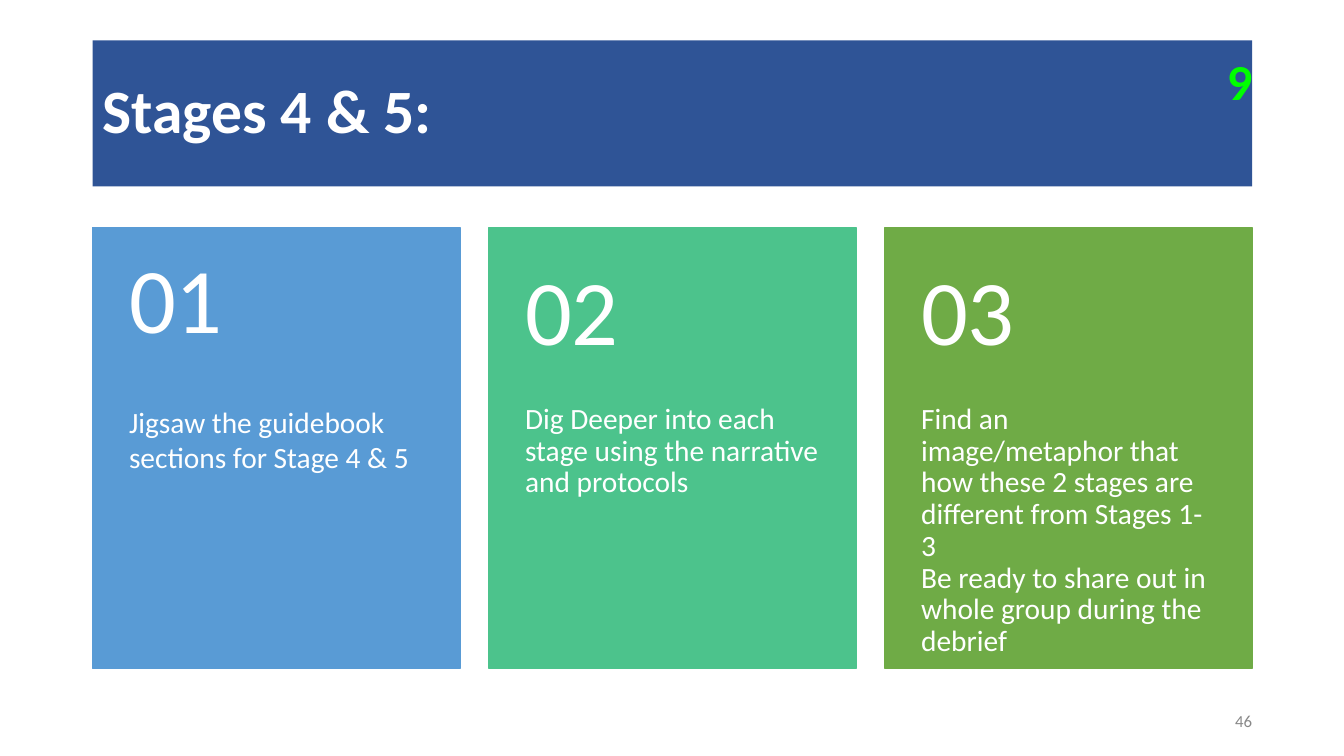
from pptx import Presentation
from pptx import util as u
from pptx.dml.color import RGBColor
from pptx.enum import shapes, text

WHITE = RGBColor(0xFF, 0xFF, 0xFF)
NAVY = RGBColor(0x2F, 0x54, 0x96)
BLUE = RGBColor(0x59, 0x9B, 0xD5)
TEAL = RGBColor(0x4C, 0xC3, 0x8C)
GREEN = RGBColor(0x6F, 0xAB, 0x46)
LIME = RGBColor(0x00, 0xFF, 0x00)
GRAY = RGBColor(0x88, 0x88, 0x88)

WIDTH, HEIGHT = 13.33, 7.5
MARGIN, CONTENT_WIDTH = 0.92, 11.5
CARD_GAP = 0.285

# Number, paragraphs, colour, line spacing of the body, height of the number box
CARDS = [
    ("01", ["Jigsaw the guidebook sections for Stage 4 & 5"], BLUE, 1.0, 1.5),
    ("02", ["Dig Deeper into each stage using the narrative and protocols"],
     TEAL, 0.9, 1.75),
    ("03", ["Find an image/metaphor that how these 2 stages are different from Stages 1-3",
            "Be ready to share out in whole group during the debrief"],
     GREEN, 0.9, 1.75),
]


def write(shape, lines, insets, size, color, bold=False, spacing=1.0,
          anchor=text.MSO_ANCHOR.TOP, align=text.PP_ALIGN.LEFT):
    """Fill a shape with formatted paragraphs."""
    frame = shape.text_frame
    frame_format = {"word_wrap": True, "vertical_anchor": anchor}
    for side, inset in zip(("left", "top", "right", "bottom"), insets):
        frame_format[f"margin_{side}"] = u.Inches(inset)
    for name, value in frame_format.items():
        setattr(frame, name, value)
    frame.text = "\n".join(lines)
    font_format = {"name": "Calibri", "size": u.Pt(size), "bold": bold}
    for paragraph in frame.paragraphs:
        paragraph.alignment = align
        paragraph.line_spacing = spacing
        for name, value in font_format.items():
            setattr(paragraph.font, name, value)
        paragraph.font.color.rgb = color


def add_text(slide, box, lines, insets, size, color, **options):
    shape = slide.shapes.add_textbox(*map(u.Inches, box))
    write(shape, lines, insets, size, color, **options)


def add_panel(slide, box, color, outlined=False):
    panel = slide.shapes.add_shape(shapes.MSO_SHAPE.RECTANGLE, *map(u.Inches, box))
    panel.shadow.inherit = False
    panel.fill.solid()
    panel.fill.fore_color.rgb = color
    if outlined:
        panel.line.color.rgb = color
        panel.line.width = u.Pt(1)
    else:
        panel.line.fill.background()
    return panel


def add_title_band(slide, box, title, badge):
    left, top, width, height = box
    band = add_panel(slide, box, NAVY)
    write(band, [title], (0.1, 0.05, 0.1, 0.05), 44, WHITE, bold=True,
          spacing=0.9, anchor=text.MSO_ANCHOR.MIDDLE)
    # Badge in the upper right corner
    add_text(slide, (left + width - 0.46, top, 0.66, 0.81), [badge],
             (0.21, 0.1, 0.1, 0.1), 36, LIME, bold=True)


def add_card(slide, box, number, lines, color, spacing, number_height):
    left, top, width, height = box
    add_panel(slide, box, color, outlined=True)
    body_top = top + height * 0.4
    add_text(slide, (left, body_top, width, height * 0.6), lines,
             (0.36, 0, 0.36, 0.36), 21, WHITE, spacing=spacing)
    add_text(slide, (left, top, width, number_height), [number],
             (0.36, 0.18, 0.36, 0.18), 66, WHITE, spacing=0.9,
             anchor=text.MSO_ANCHOR.MIDDLE)


def add_cards(slide, box):
    left, top, width, height = box
    card_width = (width - CARD_GAP * (len(CARDS) - 1)) / len(CARDS)
    for column, card in enumerate(CARDS):
        card_left = left + column * (card_width + CARD_GAP)
        add_card(slide, (card_left, top, card_width, height), *card)


def add_page_number(slide, box, number):
    add_text(slide, box, [number], (0, 0, 0, 0), 12, GRAY,
             anchor=text.MSO_ANCHOR.MIDDLE, align=text.PP_ALIGN.RIGHT)


def main():
    presentation = Presentation()
    presentation.slide_width = u.Inches(WIDTH)
    presentation.slide_height = u.Inches(HEIGHT)
    slide = presentation.slides.add_slide(presentation.slide_layouts[6])
    add_title_band(slide, (MARGIN, 0.4, CONTENT_WIDTH, 1.45), "Stages 4 & 5:", "9")
    add_cards(slide, (MARGIN, 2.26, CONTENT_WIDTH, 4.37))
    add_page_number(slide, (MARGIN + CONTENT_WIDTH - 3, 6.95, 3, 0.4), "46")
    presentation.save("out.pptx")


if __name__ == "__main__":
    main()
